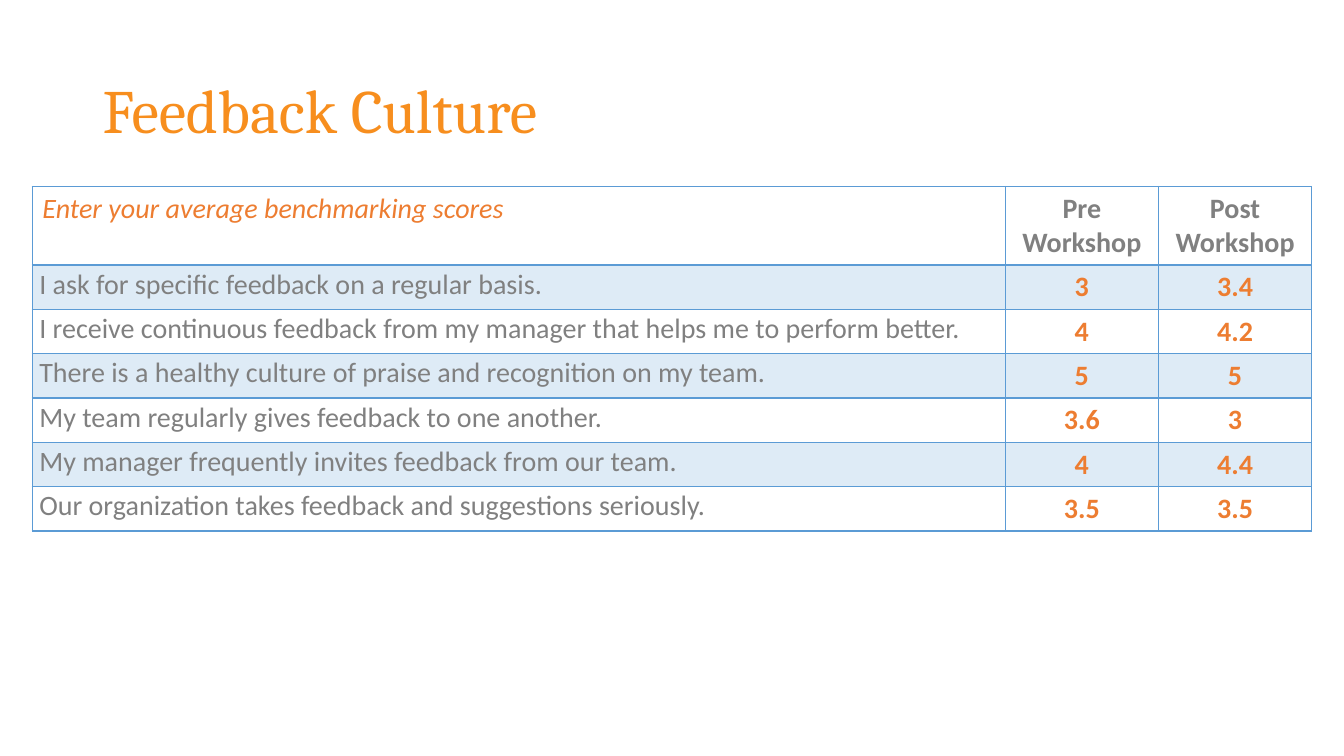
import pptx
import pptx.dml.color
import pptx.enum.text
import pptx.oxml
import pptx.oxml.ns
import pptx.util
from pptx.util import Inches

COLORS = {"title": "F78E1E", "accent": "ED7D31", "text": "808080", "blue": "5B9BD5"}
ALIGN = pptx.enum.text.PP_ALIGN


def write(frame, text, size=20, font="Calibri", color="text", bold=False,
          italic=False, align=ALIGN.LEFT, spacing=1.0):
    """Fill a text frame, one paragraph per line of text."""
    frame.word_wrap = True
    for index, line in enumerate(text.split("\n")):
        paragraph = frame.paragraphs[0] if index == 0 else frame.add_paragraph()
        paragraph.alignment = align
        paragraph.line_spacing = spacing
        run = paragraph.add_run()
        run.text = line
        run.font.size = pptx.util.Pt(size)
        run.font.name = font
        run.font.bold = bold
        run.font.italic = italic
        run.font.color.rgb = pptx.dml.color.RGBColor.from_string(COLORS[color])


def style_cell(cell, shaded, bottom_width):
    """Set the fill and the four borders of a table cell."""
    properties = cell._tc.get_or_add_tcPr()
    if shaded:
        cell.fill.solid()
        cell.fill.fore_color.rgb = pptx.dml.color.RGBColor.from_string(COLORS["blue"])
        tint = properties.find(".//" + pptx.oxml.ns.qn("a:srgbClr"))
        tint.append(pptx.oxml.parse_xml(
            f'<a:alpha {pptx.oxml.ns.nsdecls("a")} val="20000"/>'))
    else:
        cell.fill.background()
    for index, side in enumerate("LRTB"):
        width = pptx.util.Pt(bottom_width if side == "B" else 1)
        properties.insert(index, pptx.oxml.parse_xml(
            f'<a:ln{side} {pptx.oxml.ns.nsdecls("a")} w="{width}"><a:solidFill>'
            f'<a:srgbClr val="{COLORS["blue"]}"/></a:solidFill></a:ln{side}>'))


presentation = pptx.Presentation()
presentation.slide_width = Inches(13.33)
presentation.slide_height = Inches(7.5)
slide = presentation.slides.add_slide(presentation.slide_layouts[6])

# Title
title = slide.shapes.add_textbox(Inches(0.92), Inches(0.4), Inches(11.5), Inches(1.45))
title.text_frame.vertical_anchor = pptx.enum.text.MSO_ANCHOR.MIDDLE
write(title.text_frame, "Feedback Culture", size=44, font="Cambria", color="title",
      spacing=0.9)

# Benchmark scores: statement, before, after
scores = [
    ("I ask for specific feedback on a regular basis.", "3", "3.4"),
    ("I receive continuous feedback from my manager that helps me to perform better.",
     "4", "4.2"),
    ("There is a healthy culture of praise and recognition on my team.", "5", "5"),
    ("My team regularly gives feedback to one another.", "3.6", "3"),
    ("My manager frequently invites feedback from our team.", "4", "4.4"),
    ("Our organization takes feedback and suggestions seriously.", "3.5", "3.5"),
]
benchmark = slide.shapes.add_table(len(scores) + 1, 3, Inches(0.32), Inches(1.85),
                                   Inches(12.69), Inches(3.42)).table
benchmark.first_row = False
benchmark.horz_banding = False
for column, width in zip(benchmark.columns, (9.65, 1.52, 1.52)):
    column.width = Inches(width)
for index, row in enumerate(benchmark.rows):
    row.height = Inches(0.44 if index else 0.78)

# Header row
write(benchmark.cell(0, 0).text_frame, "Enter your average benchmarking scores",
      color="accent", italic=True)
for column, heading in enumerate(("Pre Workshop", "Post\nWorkshop"), start=1):
    write(benchmark.cell(0, column).text_frame, heading, bold=True, align=ALIGN.CENTER)
for column in range(3):
    style_cell(benchmark.cell(0, column), shaded=False, bottom_width=2)

# Score rows, every other one shaded
for row, (statement, *values) in enumerate(scores, start=1):
    statement_cell = benchmark.cell(row, 0)
    statement_cell.margin_left = statement_cell.margin_right = Inches(0.07)
    statement_cell.margin_top = statement_cell.margin_bottom = 0
    write(statement_cell.text_frame, statement, spacing=1.07)
    for column, value in enumerate(values, start=1):
        write(benchmark.cell(row, column).text_frame, value, color="accent", bold=True,
              align=ALIGN.CENTER)
    for column in range(3):
        style_cell(benchmark.cell(row, column), shaded=row % 2 == 1, bottom_width=1)

presentation.save("out.pptx")
